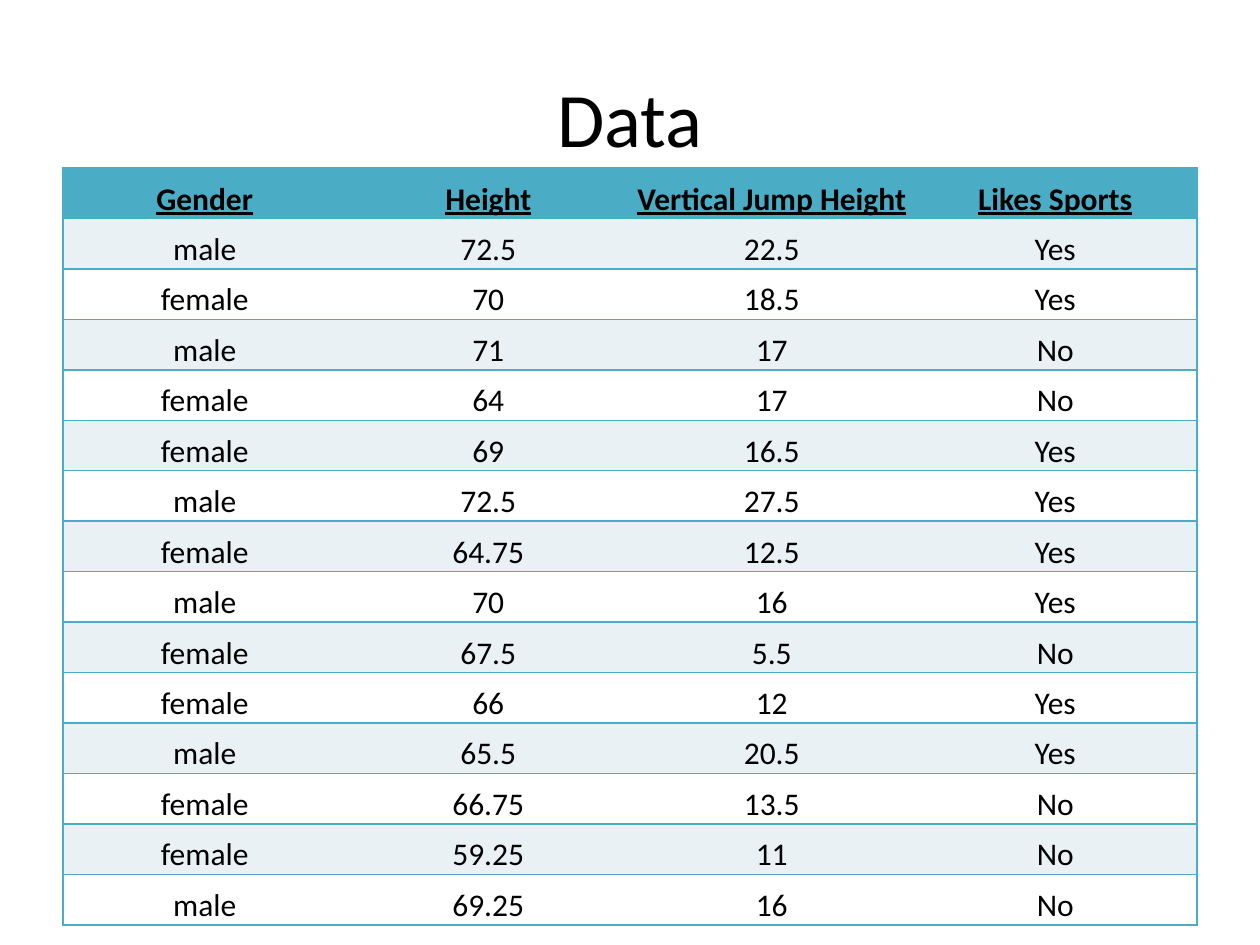
from lxml import etree
from pptx import Presentation
from pptx.dml.color import RGBColor
from pptx.enum.text import MSO_ANCHOR, PP_ALIGN
from pptx.oxml.ns import qn
from pptx.util import Pt

CENTER = PP_ALIGN.CENTER
MIDDLE, BOTTOM = MSO_ANCHOR.MIDDLE, MSO_ANCHOR.BOTTOM

TITLE = "Data"
HEADER = ("Gender", "Height", "Vertical Jump Height", "Likes Sports")
ROWS = [
    ("male", "72.5", "22.5", "Yes"),
    ("female", "70", "18.5", "Yes"),
    ("male", "71", "17", "No"),
    ("female", "64", "17", "No"),
    ("female", "69", "16.5", "Yes"),
    ("male", "72.5", "27.5", "Yes"),
    ("female", "64.75", "12.5", "Yes"),
    ("male", "70", "16", "Yes"),
    ("female", "67.5", "5.5", "No"),
    ("female", "66", "12", "Yes"),
    ("male", "65.5", "20.5", "Yes"),
    ("female", "66.75", "13.5", "No"),
    ("female", "59.25", "11", "No"),
    ("male", "69.25", "16", "No"),
]
COLORS = {"text": "000000", "accent": "4BACC6", "band": "E9F1F5", "plain": "FFFFFF"}
FONT = "Calibri"
SLIDE = (1260, 945)
TITLE_BOX = (63, 38, 1134, 157)
TABLE_BOX = (63, 168, 1134, 757)


def px(n):
    return round(n * 914400 / 126)


def write(tf, text, size=18, bold=False, underline=False):
    p = tf.paragraphs[0]
    p.alignment = CENTER
    r = p.add_run()
    r.text = text
    f = r.font
    f.name, f.size, f.bold, f.underline = FONT, Pt(size), bold, underline
    f.color.rgb = RGBColor.from_string(COLORS["text"])


def set_borders(cell, sides):
    tcPr = cell._tc.get_or_add_tcPr()
    for side in "LRTB":
        ln = etree.SubElement(tcPr, qn(f"a:ln{side}"), w=str(Pt(1)))
        if side in sides:
            fill = etree.SubElement(ln, qn("a:solidFill"))
            etree.SubElement(fill, qn("a:srgbClr"), val=COLORS["accent"])
        else:
            etree.SubElement(ln, qn("a:noFill"))


prs = Presentation()
prs.slide_width, prs.slide_height = map(px, SLIDE)
s = prs.slides.add_slide(prs.slide_layouts[5])

title = s.shapes.title
title.left, title.top, title.width, title.height = map(px, TITLE_BOX)
title.text_frame.vertical_anchor = MIDDLE
write(title.text_frame, TITLE, size=44)

data = [HEADER] + ROWS
last = len(HEADER) - 1
table = s.shapes.add_table(len(data), len(HEADER), *map(px, TABLE_BOX)).table
for i, row in enumerate(data):
    head = i == 0
    color = "accent" if head else "band" if i % 2 else "plain"
    for j, text in enumerate(row):
        cell = table.cell(i, j)
        cell.margin_left = cell.margin_right = cell.margin_top = px(1)
        cell.margin_bottom = 0
        cell.vertical_anchor = BOTTOM
        set_borders(cell, "TB" + "L" * (j == 0) + "R" * (j == last))
        cell.fill.solid()
        cell.fill.fore_color.rgb = RGBColor.from_string(COLORS[color])
        write(cell.text_frame, text, bold=head, underline=head)

prs.save("out.pptx")
